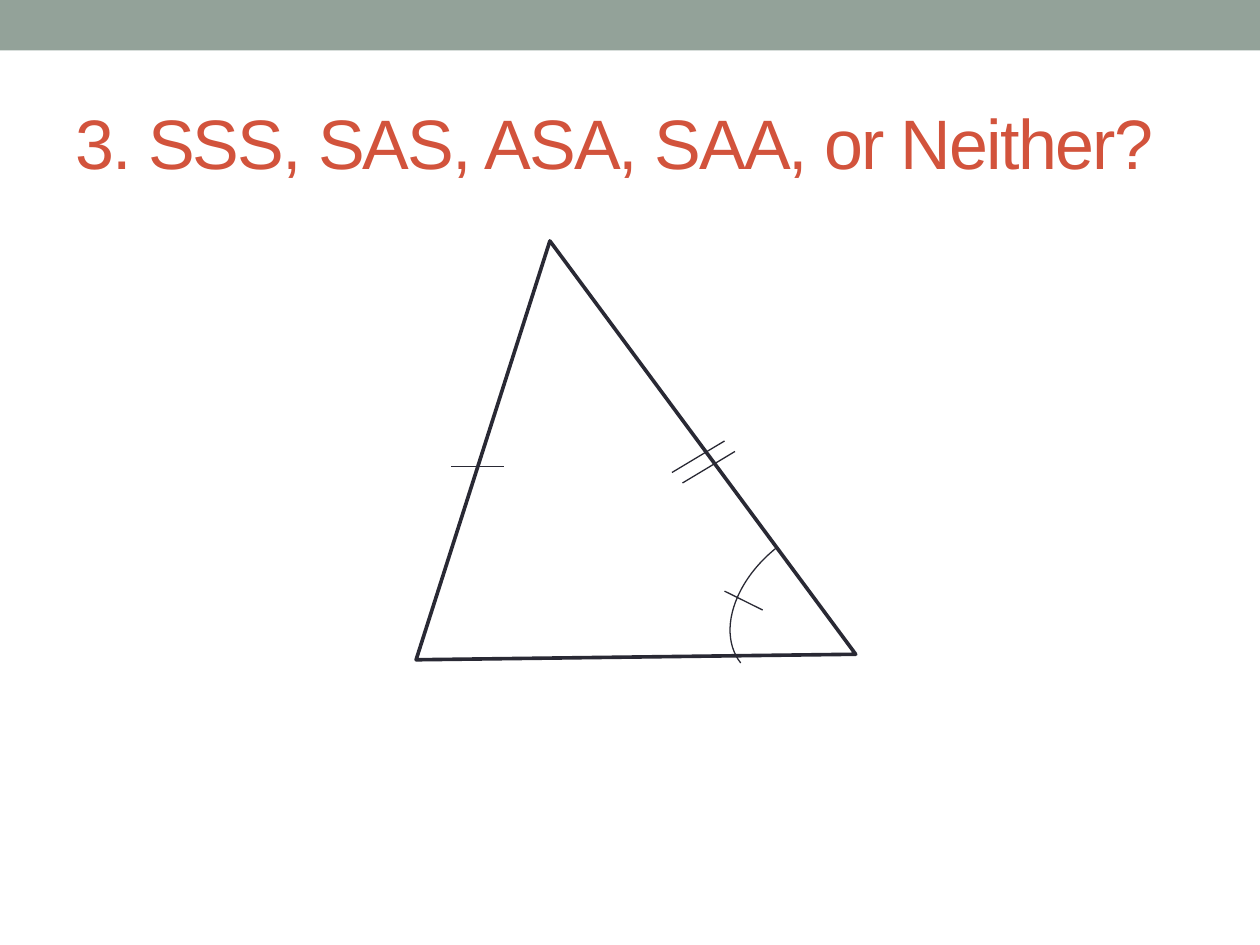
from pptx import Presentation
from pptx.dml.color import RGBColor
from pptx.enum.shapes import MSO_CONNECTOR, MSO_SHAPE
from pptx.enum.text import MSO_ANCHOR, PP_ALIGN
from pptx.util import Pt
from lxml import etree

RECT = MSO_SHAPE.RECTANGLE
TRIANGLE = MSO_SHAPE.ISOSCELES_TRIANGLE
ARC = MSO_SHAPE.ARC
LINE = MSO_CONNECTOR.STRAIGHT
MIDDLE = MSO_ANCHOR.MIDDLE
LEFT = PP_ALIGN.LEFT

GREEN = RGBColor(0x93, 0xA2, 0x99)
RED = RGBColor(0xD2, 0x53, 0x3C)
DARK = RGBColor(0x29, 0x29, 0x34)
WHITE = RGBColor(0xFF, 0xFF, 0xFF)
NS = "{http://schemas.openxmlformats.org/drawingml/2006/main}"

prs = Presentation()
prs.slide_width, prs.slide_height = Pt(720), Pt(540)
slide = prs.slides.add_slide(prs.slide_layouts[5])
shapes = slide.shapes


def add_shape(kind, box, turn=0, fill=None, width=None):
    shape = shapes.add_shape(kind, *[Pt(v) for v in box])
    shape.shadow.inherit = False
    shape.rotation = turn
    if fill is None:
        shape.fill.background()
    else:
        shape.fill.solid()
        shape.fill.fore_color.rgb = fill
    if width is None:
        shape.line.fill.background()
    else:
        shape.line.color.rgb = DARK
        shape.line.width = Pt(width)


add_shape(RECT, (0, 0, 720, 28.8), fill=GREEN)

title = shapes.title
title.left, title.top, title.width, title.height = Pt(36), Pt(42), Pt(648), Pt(78)
frame = title.text_frame
frame.word_wrap = True
frame.vertical_anchor = MIDDLE
para = frame.paragraphs[0]
para.alignment = LEFT
run = para.add_run()
run.text = "3. SSS, SAS, ASA, SAA, or Neither?"
run.font.name = "Arial"
run.font.size = Pt(40)
run.font.color.rgb = RED
run._r.get_or_add_rPr().set("spc", "-100")

add_shape(TRIANGLE, (172.8, 214.5, 293.8, 203.8), 233.5, WHITE, 2.08)
add_shape(ARC, (429, 286.5, 78, 114), 231.7, width=0.75)

ticks = [
    (258, 266.4, 288, 266.4),
    (384, 270, 414, 252),
    (390, 276, 420, 258),
    (414, 337.8, 435.8, 348.6),
]
for ends in ticks:
    tick = shapes.add_connector(LINE, *[Pt(v) for v in ends])
    tick.line.color.rgb = DARK
    tick.line.width = Pt(0.75)
    etree.SubElement(tick._element.spPr, NS + "effectLst")

prs.save("out.pptx")
